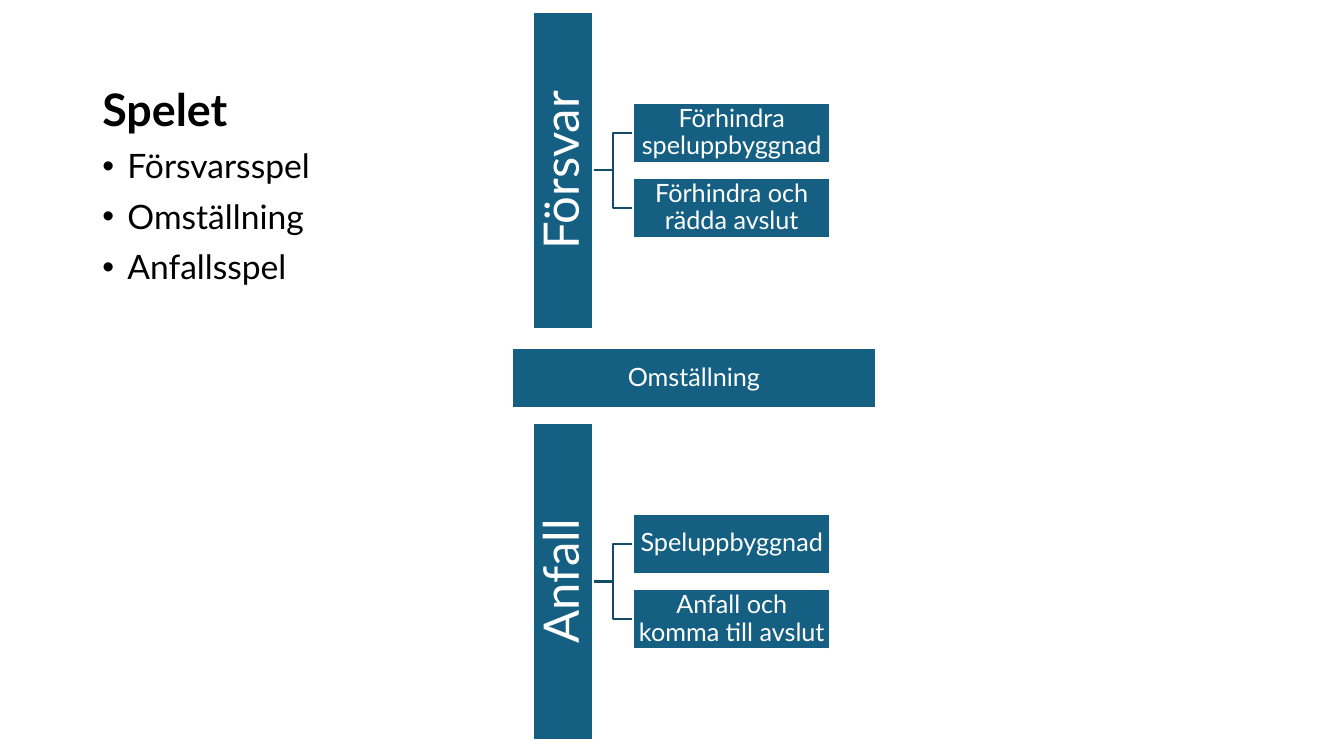
from pptx import Presentation
from pptx.util import Pt
from pptx.dml.color import RGBColor as Rgb
from pptx.enum.shapes import MSO_SHAPE as Form
from pptx.enum.text import MSO_ANCHOR as Anchor, PP_ALIGN as Align
from pptx.oxml.ns import qn
from lxml.etree import SubElement as Sub

HUES = {"box": "156082", "link": "114D68", "edge": "FFFFFF", "light": "FFFFFF", "dark": "000000"}
TREES = [
    (121.7, "Försvar", ["Förhindra speluppbyggnad", "Förhindra och rädda avslut"]),
    (415.4, "Anfall", ["Speluppbyggnad", "Anfall och komma till avslut"]),
]


class Board:
    """Draws the elements of one slide in a shared style, in points."""

    font = "Lato"
    thick = 43
    line = 1.5

    def __init__(self, slide):
        self.shapes = slide.shapes

    def hue(self, name):
        return Rgb.from_string(HUES[name])

    def style(self, para, size, hue, bold=False):
        para.line_spacing = 0.9
        for run in para.runs:
            run.font.name = self.font
            run.font.size = Pt(size)
            run.font.bold = bold
            run.font.color.rgb = self.hue(hue)

    def stroke(self, shape, hue):
        shape.shadow.inherit = False
        shape.line.color.rgb = self.hue(hue)
        shape.line.width = Pt(self.line)

    def box(self, mid, row, wide, text, size=18, inset=0.9, turn=0):
        shape = self.shapes.add_shape(
            Form.RECTANGLE, Pt(mid - wide / 2), Pt(row - self.thick / 2), Pt(wide), Pt(self.thick))
        shape.rotation = turn
        shape.fill.solid()
        shape.fill.fore_color.rgb = self.hue("box")
        self.stroke(shape, "edge")
        frame = shape.text_frame
        frame.margin_left = frame.margin_right = Pt(inset)
        frame.margin_top = frame.margin_bottom = Pt(inset)
        frame.vertical_anchor = Anchor.MIDDLE
        frame.word_wrap = True
        frame.text = text
        para = frame.paragraphs[0]
        para.alignment = Align.CENTER
        self.style(para, size, "light")

    def elbow(self, left, top, right, end):
        mid = (left + right) / 2
        pen = self.shapes.build_freeform(Pt(left), Pt(top))
        pen.add_line_segments(
            [(Pt(x), Pt(y)) for x, y in ((mid, top), (mid, end), (right, end))], close=False)
        shape = pen.convert_to_shape()
        shape.fill.background()
        self.stroke(shape, "link")

    def tree(self, row, name, parts):
        rows = [row - 27, row + 27]
        for end in reversed(rows):
            self.elbow(423.6, row, 452.2, end)
        self.box(402.1, row, 227, name, 35, 1.6, 270)
        for end, part in zip(rows, parts):
            self.box(522.7, end, 141, part)

    def list(self, left, top, wide, high, head, items):
        frame = self.shapes.add_textbox(Pt(left), Pt(top), Pt(wide), Pt(high)).text_frame
        frame.word_wrap = True
        frame.text = "\n".join([head, *items])
        for para in frame.paragraphs:
            para.space_before = Pt(10)
            self.style(para, 24, "dark")
        first, *rest = frame.paragraphs
        self.style(first, 32, "dark", True)
        for para in rest:
            props = para._p.get_or_add_pPr()
            props.set("marL", str(Pt(18)))
            props.set("indent", str(Pt(-18)))
            Sub(props, qn("a:buFont"), typeface="Arial")
            Sub(props, qn("a:buChar"), char="•")


def main():
    deck = Presentation()
    deck.slide_width, deck.slide_height = Pt(960), Pt(540)
    board = Board(deck.slides.add_slide(deck.slide_layouts[6]))
    board.list(66, 59, 828, 343, "Spelet", ["Försvarsspel", "Omställning", "Anfallsspel"])
    for tree in TREES:
        board.tree(*tree)
    board.box(495.7, 269.9, 260, "Omställning")
    deck.save("out.pptx")


if __name__ == "__main__":
    main()
